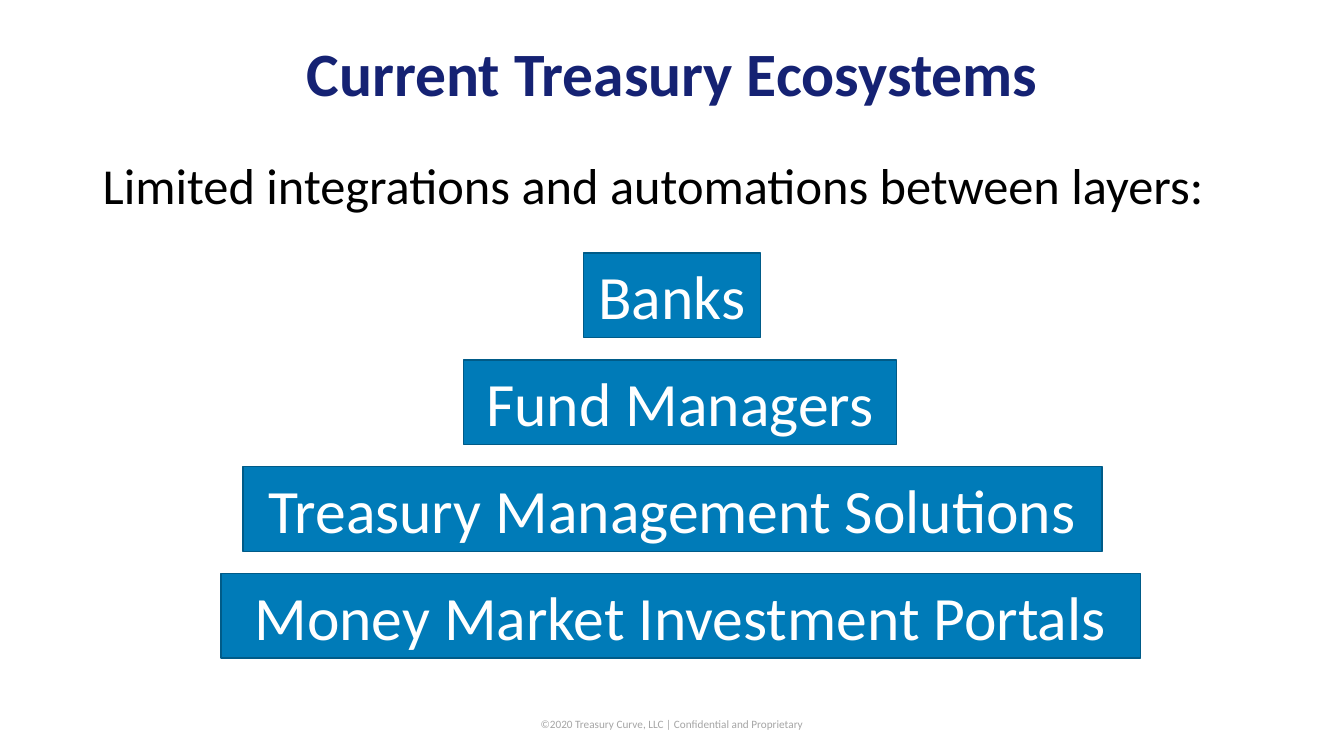
import pptx
import pptx.dml.color
import pptx.enum.shapes
import pptx.enum.text
import pptx.util

PX = 9144
NAVY = pptx.dml.color.RGBColor(0x15, 0x22, 0x73)
BLUE = pptx.dml.color.RGBColor(0x00, 0x7B, 0xB8)
DARK_BLUE = pptx.dml.color.RGBColor(0x00, 0x5B, 0x88)
GREY = pptx.dml.color.RGBColor(0xA5, 0xA5, 0xA5)
BLACK = pptx.dml.color.RGBColor(0, 0, 0)
WHITE = pptx.dml.color.RGBColor(255, 255, 255)
LEFT = pptx.enum.text.PP_ALIGN.LEFT
CENTER = pptx.enum.text.PP_ALIGN.CENTER
TOP = pptx.enum.text.MSO_ANCHOR.TOP
MIDDLE = pptx.enum.text.MSO_ANCHOR.MIDDLE

LAYER_TOP, LAYER_HEIGHT, LAYER_PITCH = 251, 84, 106
LAYERS = [
    ("Banks", 579, 175),
    ("Fund Managers", 460, 429),
    ("Treasury Management Solutions", 241, 852),
    ("Money Market Investment Portals", 219, 912),
]


def box(left, top, width, height):
    return [pptx.util.Emu(length * PX) for length in (left, top, width, height)]


def write(shape, text, size, color, align=CENTER, anchor=MIDDLE, bold=False):
    frame = shape.text_frame
    frame.text = text
    frame.word_wrap = True
    frame.auto_size = pptx.enum.text.MSO_AUTO_SIZE.NONE
    frame.vertical_anchor = anchor
    paragraph = frame.paragraphs[0]
    paragraph.alignment = align
    font = paragraph.runs[0].font
    font.name = "Calibri"
    font.size = pptx.util.Pt(size)
    font.bold = bold
    font.color.rgb = color


deck = pptx.Presentation()
deck.slide_width = pptx.util.Emu(1333 * PX)
deck.slide_height = pptx.util.Emu(750 * PX)
slide = deck.slides.add_slide(deck.slide_layouts[5])

copyright_line = slide.shapes.add_textbox(*box(509, 698, 315, 40))
write(copyright_line, "©2020 Treasury Curve, LLC | Confidential and Proprietary", 8, GREY)

title = slide.shapes.title
title.left, title.top, title.width, title.height = box(92, 3, 1150, 145)
write(title, "Current Treasury Ecosystems", 44, NAVY, bold=True)
title.text_frame.paragraphs[0].line_spacing = 0.9

intro = slide.shapes.add_textbox(*box(92, 148, 1167, 71))
write(intro, "Limited integrations and automations between layers:", 36, BLACK, LEFT, TOP)

for row, (name, left, width) in enumerate(LAYERS):
    layer = slide.shapes.add_shape(
        pptx.enum.shapes.MSO_SHAPE.RECTANGLE,
        *box(left, LAYER_TOP + row * LAYER_PITCH, width, LAYER_HEIGHT))
    layer.shadow.inherit = False
    layer.fill.solid()
    layer.fill.fore_color.rgb = BLUE
    layer.line.color.rgb = DARK_BLUE
    layer.line.width = pptx.util.Pt(1)
    write(layer, name, 44, WHITE)

deck.save("out.pptx")
